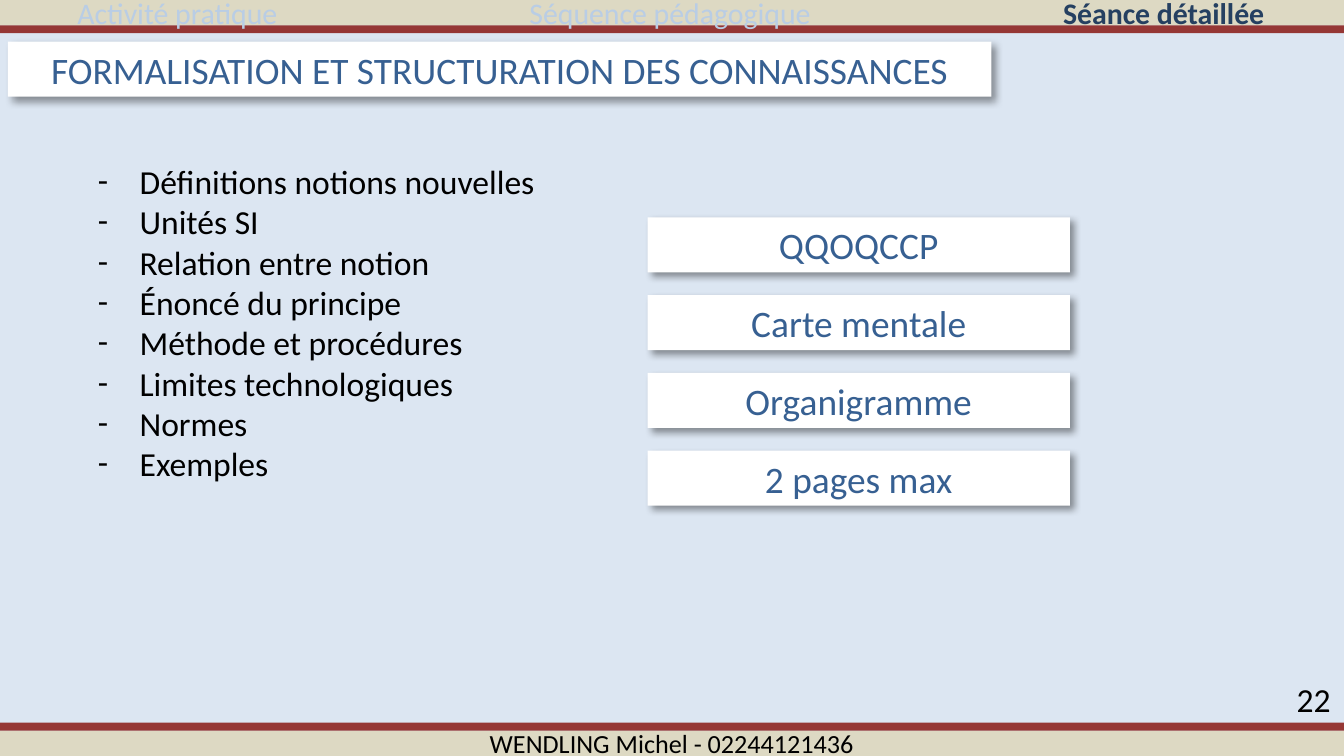
from lxml import etree
from pptx import Presentation
from pptx.dml.color import RGBColor
from pptx.enum import shapes, text
from pptx.oxml import ns
from pptx.util import Cm, Pt

COLOURS = {
    "background": "DCE6F2",
    "band": "DDD9C3",
    "stripe": "953735",
    "card": "FFFFFF",
    "card_text": "376092",
    "active": "254061",
    "inactive": "B9CDE5",
    "body": "000000",
}
PAGE_WIDTH, PAGE_HEIGHT = 25.4, 14.29
BAND, STRIPE = 0.48, 0.15
CARD_HEIGHT, CARD_PITCH = 1.04, 1.47

TABS = [
    ("Activité pratique", 0, 6.71, False),
    ("Séquence pédagogique", 8.64, 8.05, False),
    ("Séance détaillée", 18.59, 6.81, True),
]
TOPICS = [
    "Définitions notions nouvelles",
    "Unités SI",
    "Relation entre notion",
    "Énoncé du principe",
    "Méthode et procédures",
    "Limites technologiques",
    "Normes",
    "Exemples",
]
TOOLS = ["QQOQCCP", "Carte mentale", "Organigramme", "2 pages max"]


def colour(name):
    """Return the named colour."""
    return RGBColor.from_string(COLOURS[name])


def write(para, words, size=18, ink="body", bold=False, align=text.PP_ALIGN.LEFT):
    """Write one formatted span into a paragraph."""
    para.alignment = align
    span = para.add_run()
    span.text = words
    span.font.name = "Calibri"
    span.font.size = Pt(size)
    span.font.bold = bold
    span.font.color.rgb = colour(ink)


def add_box(page, left, top, width, height):
    """Add a wrapping text box and return its text frame."""
    box = page.shapes.add_textbox(Cm(left), Cm(top), Cm(width), Cm(height))
    box.text_frame.word_wrap = True
    return box.text_frame


def add_label(page, words, left, top, width, height, **style):
    """Add a text box holding a single line."""
    write(add_box(page, left, top, width, height).paragraphs[0], words, **style)


def add_bar(page, left, top, width, height, fill):
    """Add a plain filled rectangle."""
    bar = page.shapes.add_shape(
        shapes.MSO_SHAPE.RECTANGLE, Cm(left), Cm(top), Cm(width), Cm(height))
    bar.shadow.inherit = False
    bar.fill.solid()
    bar.fill.fore_color.rgb = colour(fill)
    bar.line.fill.background()
    return bar


def add_shadow(shape):
    """Give a shape a soft shadow towards the lower right."""
    effects = shape._element.spPr.find(ns.qn("a:effectLst"))
    shadow = etree.SubElement(
        effects, ns.qn("a:outerShdw"), blurRad=str(Pt(4)), dist=str(Pt(3)),
        dir=str(45 * 60000), algn="tl", rotWithShape="0")
    tint = etree.SubElement(shadow, ns.qn("a:srgbClr"), val="000000")
    etree.SubElement(tint, ns.qn("a:alpha"), val="40000")


def add_card(page, words, left, top, width, height):
    """Add a white shadowed card with centred text."""
    card = add_bar(page, left, top, width, height, "card")
    add_shadow(card)
    frame = card.text_frame
    frame.word_wrap = True
    frame.vertical_anchor = text.MSO_ANCHOR.MIDDLE
    write(frame.paragraphs[0], words, size=20, ink="card_text",
          align=text.PP_ALIGN.CENTER)


def add_header(page, left, top, width):
    """Add the top band, its stripe and the section tabs."""
    add_bar(page, left, top, width, BAND, "band")
    add_bar(page, left, top + BAND, width, STRIPE, "stripe")
    for words, offset, tab_width, active in TABS:
        add_label(page, words, left + offset, top - 0.23, tab_width, 0.94,
                  size=16, ink="active" if active else "inactive",
                  bold=active, align=text.PP_ALIGN.CENTER)


def add_footer(page, left, bottom, width):
    """Add the bottom band, its stripe, the author and the page number."""
    band_top = bottom - BAND
    add_bar(page, left, band_top, width, BAND, "band")
    add_bar(page, left, band_top - STRIPE, width, STRIPE, "stripe")
    add_label(page, "22", left + width - 2.16, bottom - 1.59, 2.16, 0.76,
              align=text.PP_ALIGN.RIGHT)
    add_label(page, "WENDLING Michel - 02244121436", left, bottom - 0.67,
              width, 0.76, size=14, align=text.PP_ALIGN.CENTER)


def add_topics(page, left, top, width, height):
    """Add the dashed list of topics."""
    frame = add_box(page, left, top, width, height)
    for index, topic in enumerate(TOPICS):
        para = frame.add_paragraph() if index else frame.paragraphs[0]
        write(para, topic)
        layout = para._p.get_or_add_pPr()
        layout.set("marL", str(Cm(0.79)))
        layout.set("indent", str(Cm(-0.79)))
        etree.SubElement(layout, ns.qn("a:buFont"), typeface="Calibri")
        etree.SubElement(layout, ns.qn("a:buChar"), char="-")


def add_tools(page, left, top, width):
    """Add the evenly spaced column of tool cards."""
    for index, tool in enumerate(TOOLS):
        add_card(page, tool, left, top + index * CARD_PITCH, width, CARD_HEIGHT)


def main():
    """Build and save the deck."""
    deck = Presentation()
    deck.slide_width, deck.slide_height = Cm(PAGE_WIDTH), Cm(PAGE_HEIGHT)
    page = deck.slides.add_slide(deck.slide_layouts[6])
    page.background.fill.solid()
    page.background.fill.fore_color.rgb = colour("background")
    add_header(page, 0, 0, PAGE_WIDTH)
    add_footer(page, 0, PAGE_HEIGHT, PAGE_WIDTH)
    add_card(page, "FORMALISATION ET STRUCTURATION DES CONNAISSANCES",
             0.15, 0.79, 18.59, CARD_HEIGHT)
    add_topics(page, 1.6, 2.92, 17.15, 6.4)
    add_tools(page, 12.24, 4.11, 7.98)
    deck.save("out.pptx")


if __name__ == "__main__":
    main()
